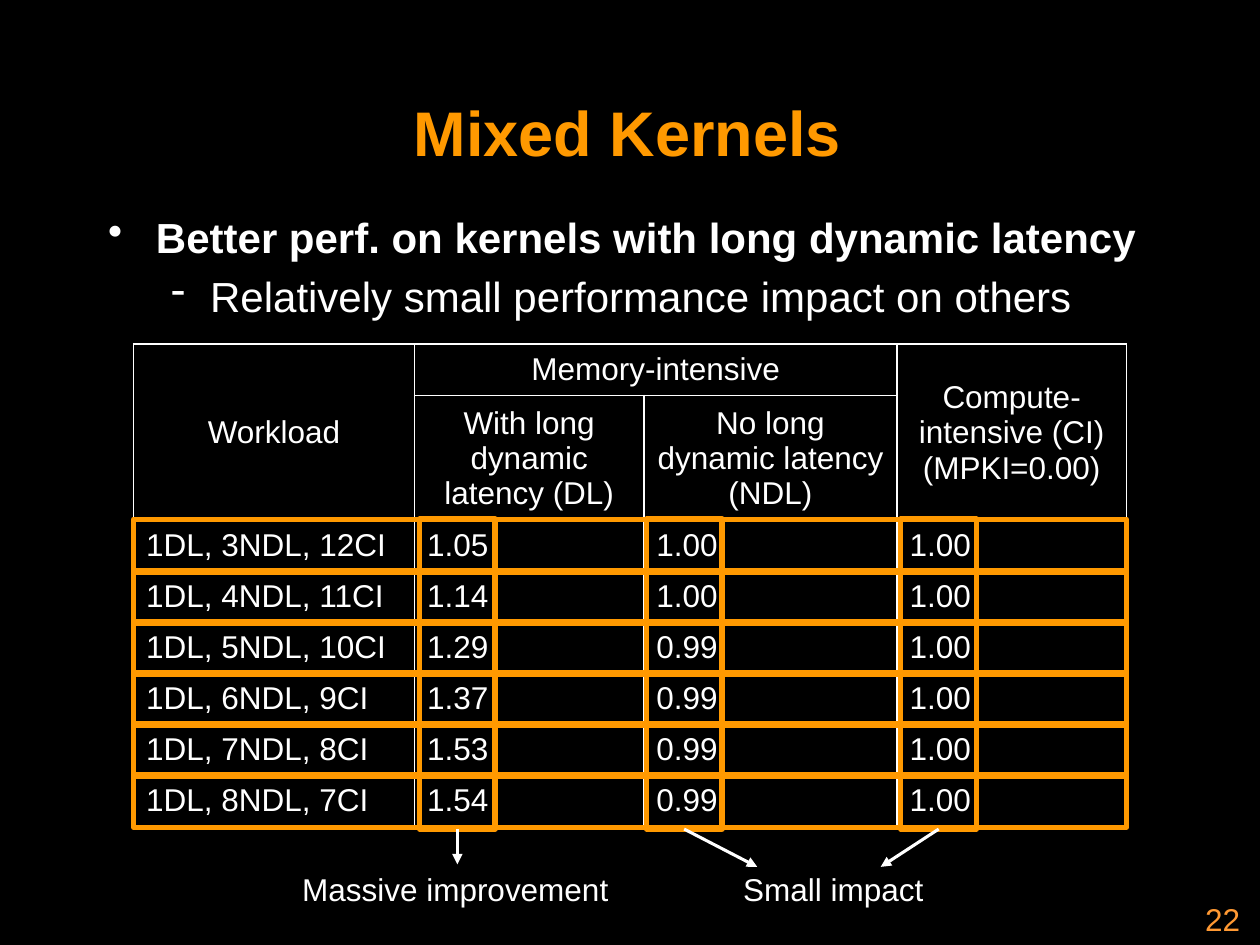
from pptx import Presentation
from pptx.dml.color import RGBColor
from pptx.enum.shapes import MSO_CONNECTOR, MSO_SHAPE
from pptx.enum.text import MSO_ANCHOR, PP_ALIGN
from pptx.oxml.ns import qn
from pptx.util import Inches, Pt
from lxml.etree import SubElement

COLORS = {"back": "000000", "text": "FFFFFF", "accent": "FF9900", "number": "FF9933"}
FONT = "Arial"
WIDTH, HEIGHT = 10, 7.5

COLUMNS = [2.23, 1.82, 2.01, 1.82]
HEAD_ROWS = [0.41, 0.94]
ROW = 0.405
RESULTS = [
    ("1DL, 3NDL, 12CI", "1.05", "1.00", "1.00"),
    ("1DL, 4NDL, 11CI", "1.14", "1.00", "1.00"),
    ("1DL, 5NDL, 10CI", "1.29", "0.99", "1.00"),
    ("1DL, 6NDL, 9CI", "1.37", "0.99", "1.00"),
    ("1DL, 7NDL, 8CI", "1.53", "0.99", "1.00"),
    ("1DL, 8NDL, 7CI", "1.54", "0.99", "1.00"),
]
HEADINGS = [  # row, column, last row, last column, text
    (0, 0, 1, 0, "Workload"),
    (0, 1, 0, 2, "Memory-intensive"),
    (0, 3, 1, 3, "Compute-intensive (CI)\v(MPKI=0.00)"),
    (1, 1, 1, 1, "With long dynamic latency (DL)"),
    (1, 2, 1, 2, "No long dynamic latency (NDL)"),
]


def inches(box):
    return [Inches(v) for v in box]


def rgb(name):
    return RGBColor.from_string(COLORS[name])


def style(p, size=18, color="text", bold=False, align=PP_ALIGN.LEFT):
    p.font.name, p.font.size, p.font.bold = FONT, Pt(size), bold
    p.font.color.rgb = rgb(color)
    p.alignment = align


def add_text(s, box, text, wrap=True, anchor=MSO_ANCHOR.TOP, **look):
    tf = s.shapes.add_textbox(*inches(box)).text_frame
    tf.word_wrap, tf.vertical_anchor = wrap, anchor
    tf.text = text
    for p in tf.paragraphs:
        style(p, **look)
    return tf


def add_bullets(s, box):
    tf = add_text(s, box, "Better perf. on kernels with long dynamic latency\n"
                  "Relatively small performance impact on others", size=24)
    marks = [("•", 0.38, -0.38), ("-", 0.81, -0.31)]
    for level, (p, (mark, left, indent)) in enumerate(zip(tf.paragraphs, marks)):
        p.level, p.space_before, p.font.bold = level, Pt(5), level == 0
        pPr = p._p.get_or_add_pPr()
        pPr.set("marL", str(Inches(left)))
        pPr.set("indent", str(Inches(indent)))
        bullet = pPr.makeelement(qn("a:buChar"), {"char": mark})
        pPr.insert_element_before(bullet, "a:tabLst", "a:defRPr", "a:extLst")


def add_borders(cell):
    tcPr = cell._tc.get_or_add_tcPr()
    for i, side in enumerate(("a:lnL", "a:lnR", "a:lnT", "a:lnB")):
        ln = tcPr.makeelement(qn(side), {"w": str(Pt(1))})
        fill = SubElement(ln, qn("a:solidFill"))
        SubElement(fill, qn("a:srgbClr"), val=COLORS["text"])
        tcPr.insert(i, ln)


def add_results(s, left, top):
    heights = HEAD_ROWS + [ROW] * len(RESULTS)
    box = (left, top, sum(COLUMNS), sum(heights))
    table = s.shapes.add_table(len(heights), len(COLUMNS), *inches(box)).table
    for column, width in zip(table.columns, COLUMNS):
        column.width = Inches(width)
    for row, height in zip(table.rows, heights):
        row.height = Inches(height)
    for cell in table.iter_cells():
        cell.fill.background()
        add_borders(cell)

    # Headings
    for row, col, last_row, last_col, text in HEADINGS:
        cell = table.cell(row, col)
        if (row, col) != (last_row, last_col):
            cell.merge(table.cell(last_row, last_col))
        cell.text = text
        cell.vertical_anchor = MSO_ANCHOR.MIDDLE
        style(cell.text_frame.paragraphs[0], align=PP_ALIGN.CENTER)

    # Values
    for row, values in enumerate(RESULTS, len(HEAD_ROWS)):
        for col, value in enumerate(values):
            cell = table.cell(row, col)
            cell.text = value
            style(cell.text_frame.paragraphs[0])


def add_frame(s, box):
    sp = s.shapes.add_shape(MSO_SHAPE.RECTANGLE, *inches(box))
    sp.shadow.inherit = False
    sp.fill.background()
    sp.line.color.rgb, sp.line.width = rgb("accent"), Pt(3)
    return sp


def add_highlights(s, left, top):
    for i in range(len(RESULTS)):
        add_frame(s, (left, top + i * ROW, sum(COLUMNS), 0.42))
    return [add_frame(s, (left + x, top, 0.6, 2.46)) for x in (2.27, 4.07, 6.09)]


def add_arrow(s, frame, x, y):
    line = s.shapes.add_connector(MSO_CONNECTOR.STRAIGHT, 0, 0, Inches(x), Inches(y))
    line.begin_connect(frame, 2)
    line.line.color.rgb, line.line.width = rgb("text"), Pt(1.75)
    SubElement(line.line._get_or_add_ln(), qn("a:tailEnd"), type="triangle")
    SubElement(line._element.spPr, qn("a:effectLst"))


def add_remarks(s, frames, top):
    add_text(s, (2.3, top, 2.66, 0.4), "Massive improvement", wrap=False)
    add_text(s, (5.8, top, 1.65, 0.4), "Small impact", wrap=False)
    for frame, x, dy in zip(frames, (3.63, 6.01, 6.99), (0, 0.02, 0.02)):
        add_arrow(s, frame, x, top + dy)


def main():
    prs = Presentation()
    prs.slide_width, prs.slide_height = Inches(WIDTH), Inches(HEIGHT)
    s = prs.slides.add_slide(prs.slide_layouts[6])
    s.background.fill.solid()
    s.background.fill.fore_color.rgb = rgb("back")

    # Title and bullets
    add_text(s, (0.73, 0.58, 8.5, 0.93), "Mixed Kernels", anchor=MSO_ANCHOR.MIDDLE,
             size=36, color="accent", bold=True, align=PP_ALIGN.CENTER)
    add_bullets(s, (0.76, 1.63, 8.5, 5.39))

    # Table with highlighted rows and columns
    left = (WIDTH - sum(COLUMNS)) / 2
    add_results(s, left, 2.73)
    frames = add_highlights(s, left, 4.12)

    # Slide number and remarks
    add_text(s, (7.86, 7.09, 2.08, 0.5), "22", color="number", align=PP_ALIGN.RIGHT)
    add_remarks(s, frames, 6.86)
    prs.save("out.pptx")


if __name__ == "__main__":
    main()
